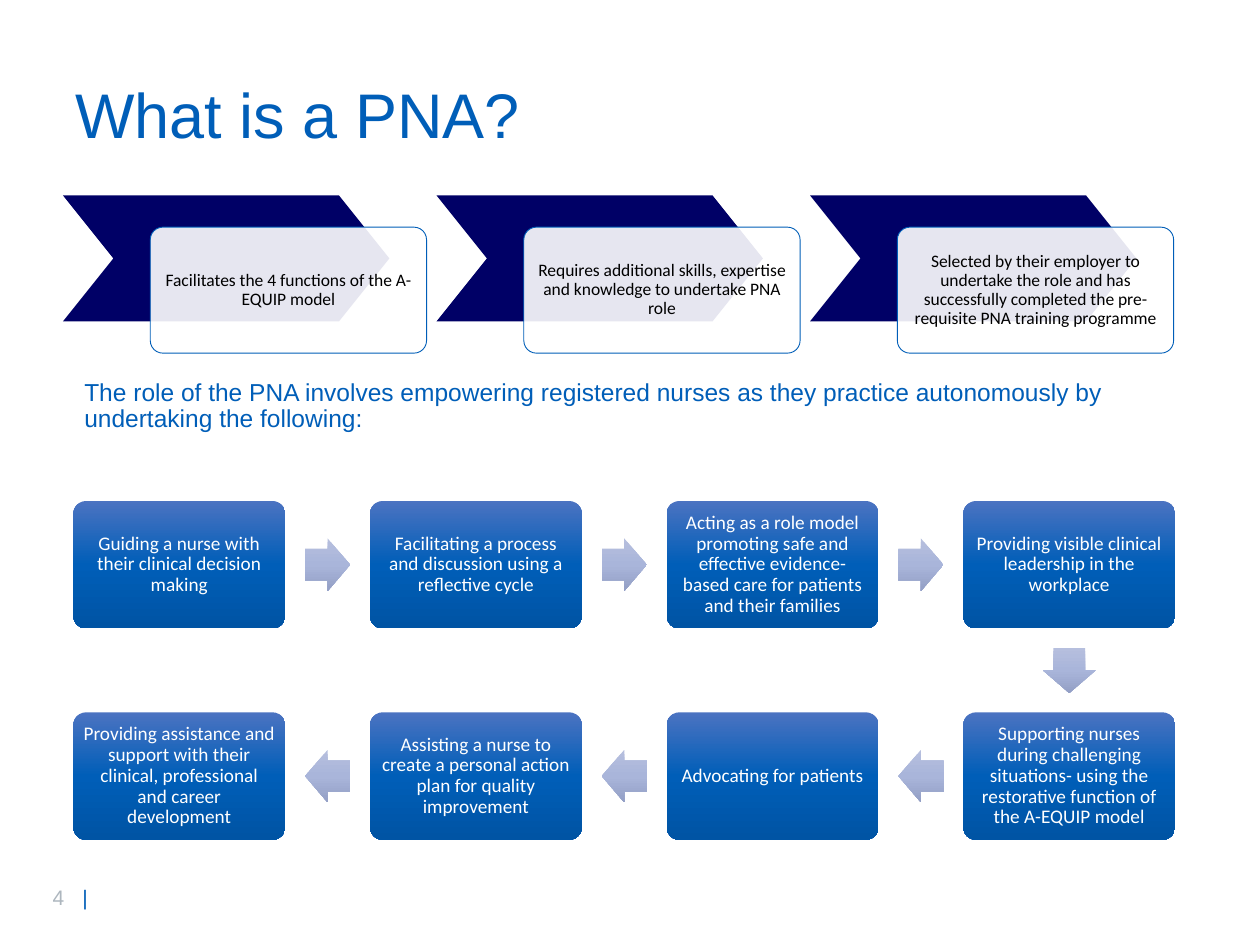
from dataclasses import dataclass

from lxml import etree
from pptx import Presentation
from pptx.dml.color import RGBColor
from pptx.enum import shapes, text
from pptx.oxml import ns
from pptx.util import Cm, Pt

KINDS = shapes.MSO_SHAPE
MIDDLE = text.MSO_ANCHOR.MIDDLE


@dataclass(frozen=True)
class Theme:
    blue: str = "005EB8"
    navy: str = "000066"
    grey: str = "ADB6BE"
    white: str = "FFFFFF"
    black: str = "000000"
    step_fill: tuple = ("4B73C1", "005EB8", "0054A4")
    arrow_fill: tuple = ("B6BFDE", "A9B5DA", "939FC5")
    heading_font: str = "Arial"
    label_font: str = "Calibri"
    title_size: int = 36
    intro_size: int = 14
    footer_size: int = 12
    step_size: int = 11
    card_size: int = 10


class Builder:
    def __init__(self, page, theme):
        self.page = page
        self.theme = theme

    def style(self, font, name, size, color):
        font.name = name
        font.size = Pt(size)
        font.color.rgb = RGBColor.from_string(color)

    def text_box(self, words, left, top, width, height, size,
                 anchor=text.MSO_ANCHOR.TOP):
        box = self.page.shapes.add_textbox(Cm(left), Cm(top), Cm(width), Cm(height))
        frame = box.text_frame
        frame.word_wrap = True
        frame.vertical_anchor = anchor
        frame.text = words
        para = frame.paragraphs[0]
        para.line_spacing = 0.9
        self.style(para.runs[0].font, self.theme.heading_font, size, self.theme.blue)
        return box

    def shape(self, kind, left, top, width, height, *adjustments):
        shape = self.page.shapes.add_shape(
            kind, Cm(left), Cm(top), Cm(width), Cm(height))
        shape.shadow.inherit = False
        shape.line.fill.background()
        for index, value in enumerate(adjustments):
            shape.adjustments[index] = value
        return shape

    def solid(self, shape, color, alpha=100):
        shape.fill.solid()
        shape.fill.fore_color.rgb = RGBColor.from_string(color)
        if alpha < 100:
            clr = shape.fill._xPr.find(".//" + ns.qn("a:srgbClr"))
            etree.SubElement(clr, ns.qn("a:alpha"), val=str(alpha * 1000))

    def gradient(self, shape, colors):
        """Fill from top to bottom with evenly spaced stops."""
        shape.fill.gradient()
        grad = shape.fill._xPr.find(ns.qn("a:gradFill"))
        grad.set("rotWithShape", "0")
        for child in list(grad):
            grad.remove(child)
        stops = etree.SubElement(grad, ns.qn("a:gsLst"))
        for index, color in enumerate(colors):
            position = 100000 * index // (len(colors) - 1)
            stop = etree.SubElement(stops, ns.qn("a:gs"), pos=str(position))
            etree.SubElement(stop, ns.qn("a:srgbClr"), val=color)
        etree.SubElement(grad, ns.qn("a:lin"), ang="5400000", scaled="0")

    def label(self, shape, words, size, color, inset):
        frame = shape.text_frame
        frame.word_wrap = True
        frame.vertical_anchor = MIDDLE
        frame.margin_left = frame.margin_right = Cm(inset)
        frame.margin_top = frame.margin_bottom = Cm(inset)
        frame.text = words
        para = frame.paragraphs[0]
        para.alignment = text.PP_ALIGN.CENTER
        para.line_spacing = 0.9
        self.style(para.runs[0].font, self.theme.label_font, size, color)

    def chevron_card(self, words, left, top):
        chevron = self.shape(KINDS.CHEVRON, left, top, 6.58, 2.54, 0.4)
        self.solid(chevron, self.theme.navy)
        card = self.shape(KINDS.ROUNDED_RECTANGLE,
                          left + 1.76, top + 0.64, 5.57, 2.54, 0.1)
        self.solid(card, self.theme.white, alpha=90)
        card.line.color.rgb = RGBColor.from_string(self.theme.blue)
        card.line.width = Pt(0.5)
        self.label(card, words, self.theme.card_size, self.theme.black, 0.2)

    def step(self, words, left, top, width, height):
        box = self.shape(KINDS.ROUNDED_RECTANGLE, left, top, width, height, 0.1)
        self.gradient(box, self.theme.step_fill)
        self.label(box, words, self.theme.step_size, self.theme.white, 0.13)

    def arrow(self, center_x, center_y, rotation):
        width, height = 0.91, 1.06
        arrow = self.shape(KINDS.RIGHT_ARROW, center_x - width / 2,
                           center_y - height / 2, width, height, 0.6, 0.5)
        arrow.rotation = rotation
        self.gradient(arrow, self.theme.arrow_fill)

    def page_number(self, number):
        box = self.text_box(f"{number}\t", 0.81, 17.7, 1.8, 0.76,
                            self.theme.footer_size)
        para = box.text_frame.paragraphs[0]
        para.line_spacing = 1
        tabs = etree.SubElement(para._p.get_or_add_pPr(), ns.qn("a:tabLst"))
        etree.SubElement(tabs, ns.qn("a:tab"), pos=str(Cm(0.6)), algn="l")
        para.runs[0].font.color.rgb = RGBColor.from_string(self.theme.grey)
        bar = para.add_run()
        bar.text = "|"
        self.style(bar.font, self.theme.heading_font,
                   self.theme.footer_size, self.theme.blue)


CARDS = [
    "Facilitates the 4 functions of the A-EQUIP model",
    "Requires additional skills, expertise and knowledge to undertake PNA role",
    "Selected by their employer to undertake the role and has successfully "
    "completed the pre-requisite PNA training programme",
]

# Steps in reading order: along the first row, then back along the second
STEPS = [
    "Guiding a nurse with their clinical decision making",
    "Facilitating a process and discussion using a reflective cycle",
    "Acting as a role model promoting safe and effective evidence-based care "
    "for patients and their families",
    "Providing visible clinical leadership in the workplace",
    "Supporting nurses during challenging situations- using the restorative "
    "function of the A-EQUIP model",
    "Advocating for patients",
    "Assisting a nurse to create a personal action plan for quality improvement",
    "Providing assistance and support with their clinical, professional and "
    "career development",
]


def main():
    deck = Presentation()
    deck.slide_width, deck.slide_height = Cm(25.4), Cm(19.05)
    theme = Theme()
    builder = Builder(deck.slides.add_slide(deck.slide_layouts[6]), theme)

    # Page number, title and introduction
    builder.page_number(4)
    builder.text_box("What is a PNA?", 1.27, 1.54, 18.24, 1.7,
                     theme.title_size, MIDDLE)
    builder.text_box(
        "The role of the PNA involves empowering registered nurses as they "
        "practice autonomously by undertaking the following:",
        1.45, 7.54, 21.74, 1.45, theme.intro_size)

    # Chevrons with cards
    for index, words in enumerate(CARDS):
        builder.chevron_card(words, 1.27 + 7.53 * index, 3.94)

    # Snaking process
    columns, width, height = 4, 4.27, 2.57
    corners = []
    for index, words in enumerate(STEPS):
        row, column = divmod(index, columns)
        if row % 2:
            column = columns - 1 - column
        left, top = 1.48 + 5.98 * column, 10.1 + 4.26 * row
        builder.step(words, left, top, width, height)
        corners.append((left, top))

    # Arrows midway between neighbouring steps
    for (left, top), (next_left, next_top) in zip(corners, corners[1:]):
        if next_top > top:
            rotation = 90
        else:
            rotation = 0 if next_left > left else 180
        builder.arrow((left + next_left + width) / 2,
                      (top + next_top + height) / 2, rotation)

    deck.save("out.pptx")


if __name__ == "__main__":
    main()
